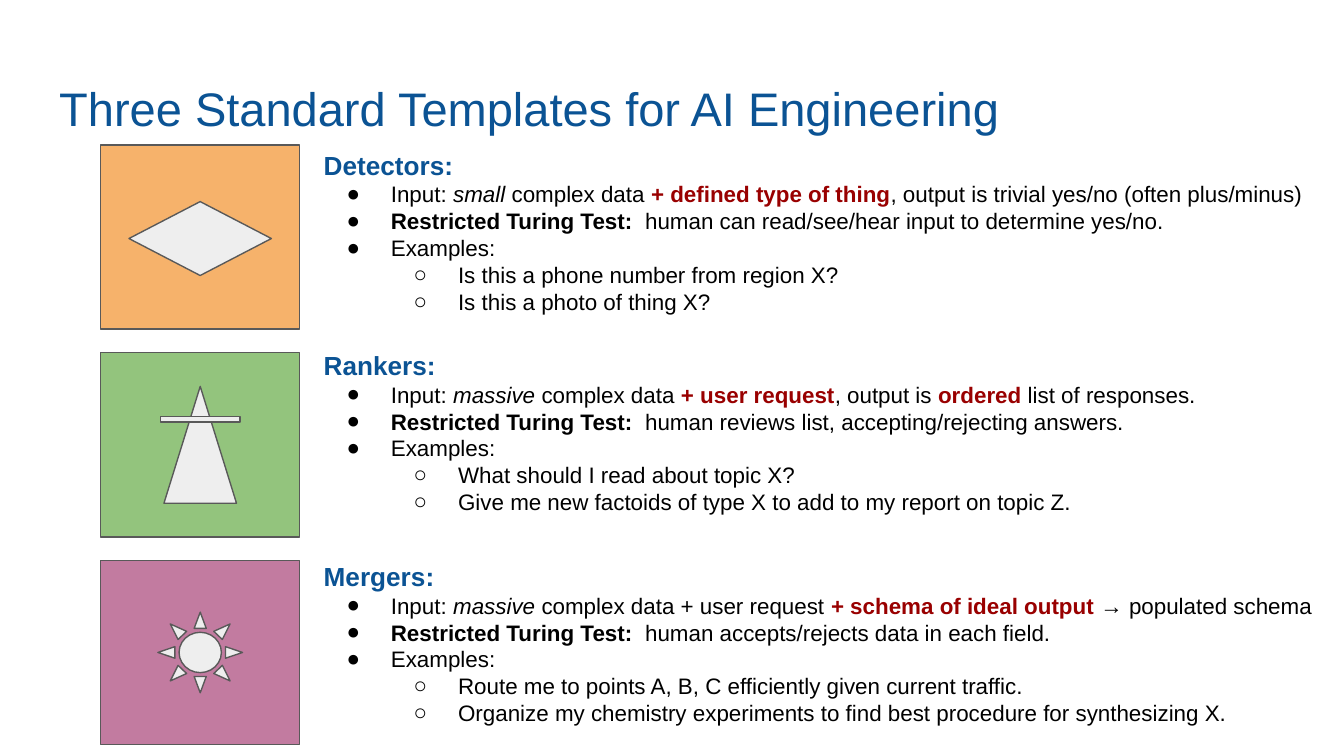
"""Build a slide presenting three standard templates for AI engineering."""
import pptx
import pptx.dml.color
import pptx.enum.shapes
import pptx.enum.text
import pptx.oxml.xmlchemy
import pptx.util

Inches = pptx.util.Inches
Shapes = pptx.enum.shapes.MSO_SHAPE

THEME = {
    "font": "Arial", "heading": "0B5394", "body": "000000", "accent": "990000",
    "icon": "EEEEEE", "outline": "595959",
    "title_size": 25.2, "heading_size": 14, "body_size": 12, "line_width": 0.75,
}
STYLES = {
    "plain": {},
    "italic": {"italic": True},
    "bold": {"bold": True},
    "accent": {"bold": True, "color": THEME["accent"]},
}
TITLE = "Three Standard Templates for AI Engineering"
TEMPLATES = [
    {
        "name": "Detectors:", "color": "F6B26B", "text_top": 1.01,
        "icon": [(Shapes.FLOWCHART_DECISION, 1.06, 0.55, 0.01)],
        "input": [("Input: ", "plain"), ("small ", "italic"), ("complex data ", "plain"),
                  ("+ defined type of thing", "accent"),
                  (", output is trivial yes/no (often plus/minus)", "plain")],
        "test": " human can read/see/hear input to determine yes/no.",
        "examples": ["Is this a phone number from region X?", "Is this a photo of thing X?"],
    },
    {
        "name": "Rankers:", "color": "93C47D", "text_top": 2.5,
        "icon": [(Shapes.FLOWCHART_EXTRACT, 0.54, 0.87, 0), (Shapes.RECTANGLE, 0.59, 0.04, -0.19)],
        "input": [("Input: ", "plain"), ("massive", "italic"), (" complex data ", "plain"),
                  ("+ user request", "accent"), (", output is ", "plain"),
                  ("ordered", "accent"), (" list of responses.", "plain")],
        "test": " human reviews list, accepting/rejecting answers.",
        "examples": ["What should I read about topic X?",
                     "Give me new factoids of type X to add to my report on topic Z."],
    },
    {
        "name": "Mergers:", "color": "C27BA0", "text_top": 4.07,
        "icon": [(Shapes.SUN, 0.63, 0.6, 0)],
        "input": [("Input: ", "plain"), ("massive ", "italic"),
                  ("complex data + user request ", "plain"),
                  ("+ schema of ideal output", "accent"), (" → populated schema", "plain")],
        "test": " human accepts/rejects data in each field.",
        "examples": ["Route me to points A, B, C efficiently given current traffic.",
                     "Organize my chemistry experiments to find best procedure for synthesizing X."],
    },
]
SLIDE_WIDTH = 10
SLIDE_HEIGHT = SLIDE_WIDTH * 9 / 16
TILE_LEFT, TILE_WIDTH, TILE_HEIGHT = 0.75, 1.48, 1.37
FIRST_TILE_TOP, LAST_TILE_TOP = 1.08, 4.17
TEXT_LEFT, TEXT_WIDTH, TEXT_HEIGHT = 2.31, 7.61, 1.45
BULLETS = "●○"


def rgb(color):
    return pptx.dml.color.RGBColor.from_string(color)


def add_run(paragraph, text, size=THEME["body_size"], color=THEME["body"], bold=False, italic=False):
    run = paragraph.add_run()
    run.text = text
    font = run.font
    font.name, font.size = THEME["font"], pptx.util.Pt(size)
    font.bold, font.italic = bold, italic
    font.color.rgb = rgb(color)


def set_frame(frame, auto_size):
    frame.word_wrap = True
    frame.auto_size = auto_size
    frame.vertical_anchor = pptx.enum.text.MSO_ANCHOR.TOP
    frame.margin_left = frame.margin_right = Inches(0.1)
    frame.margin_top = frame.margin_bottom = Inches(0.1)


def add_bullet(frame, runs, level=0):
    paragraph = frame.add_paragraph()
    paragraph.level = level
    properties = paragraph._p.get_or_add_pPr()
    properties.set("marL", str(Inches(0.5 * (level + 1))))
    properties.set("indent", str(Inches(-0.33)))
    color = pptx.oxml.xmlchemy.OxmlElement("a:buClr")
    value = pptx.oxml.xmlchemy.OxmlElement("a:srgbClr")
    value.set("val", THEME["body"])
    color.append(value)
    font = pptx.oxml.xmlchemy.OxmlElement("a:buFont")
    font.set("typeface", THEME["font"])
    character = pptx.oxml.xmlchemy.OxmlElement("a:buChar")
    character.set("char", BULLETS[level])
    properties.extend([color, font, character])
    for text, style in runs:
        add_run(paragraph, text, **STYLES[style])


def add_centred_shape(group, kind, center, size, color):
    left, top = (middle - length / 2 for middle, length in zip(center, size))
    shape = group.shapes.add_shape(kind, Inches(left), Inches(top), *map(Inches, size))
    shape.shadow.inherit = False
    shape.fill.solid()
    shape.fill.fore_color.rgb = rgb(color)
    shape.line.color.rgb = rgb(THEME["outline"])
    shape.line.width = pptx.util.Pt(THEME["line_width"])


def add_tile(slide, template, top):
    group = slide.shapes.add_group_shape()
    x, y = TILE_LEFT + TILE_WIDTH / 2, top + TILE_HEIGHT / 2
    add_centred_shape(group, Shapes.RECTANGLE, (x, y), (TILE_WIDTH, TILE_HEIGHT), template["color"])
    for kind, width, height, offset in template["icon"]:
        add_centred_shape(group, kind, (x, y + offset), (width, height), THEME["icon"])


def add_description(slide, template):
    box = slide.shapes.add_textbox(
        Inches(TEXT_LEFT), Inches(template["text_top"]), Inches(TEXT_WIDTH), Inches(TEXT_HEIGHT))
    frame = box.text_frame
    set_frame(frame, pptx.enum.text.MSO_AUTO_SIZE.SHAPE_TO_FIT_TEXT)
    add_run(frame.paragraphs[0], template["name"], size=THEME["heading_size"],
            color=THEME["heading"], bold=True)
    add_bullet(frame, template["input"])
    add_bullet(frame, [("Restricted Turing Test: ", "bold"), (template["test"], "plain")])
    add_bullet(frame, [("Examples:", "plain")])
    for example in template["examples"]:
        add_bullet(frame, [(example, "plain")], level=1)


def add_title(slide):
    title = slide.shapes.title
    title.left, title.top, title.width, title.height = map(Inches, (0.34, 0.49, 9.32, 0.63))
    set_frame(title.text_frame, pptx.enum.text.MSO_AUTO_SIZE.NONE)
    paragraph = title.text_frame.paragraphs[0]
    paragraph.alignment = pptx.enum.text.PP_ALIGN.LEFT
    add_run(paragraph, TITLE, size=THEME["title_size"], color=THEME["heading"])


def main():
    presentation = pptx.Presentation()
    presentation.slide_width = Inches(SLIDE_WIDTH)
    presentation.slide_height = Inches(SLIDE_HEIGHT)
    slide = presentation.slides.add_slide(presentation.slide_layouts[5])
    add_title(slide)
    step = (LAST_TILE_TOP - FIRST_TILE_TOP) / (len(TEMPLATES) - 1)
    for index, template in enumerate(TEMPLATES):
        add_tile(slide, template, FIRST_TILE_TOP + index * step)
        add_description(slide, template)
    presentation.save("out.pptx")


if __name__ == "__main__":
    main()
